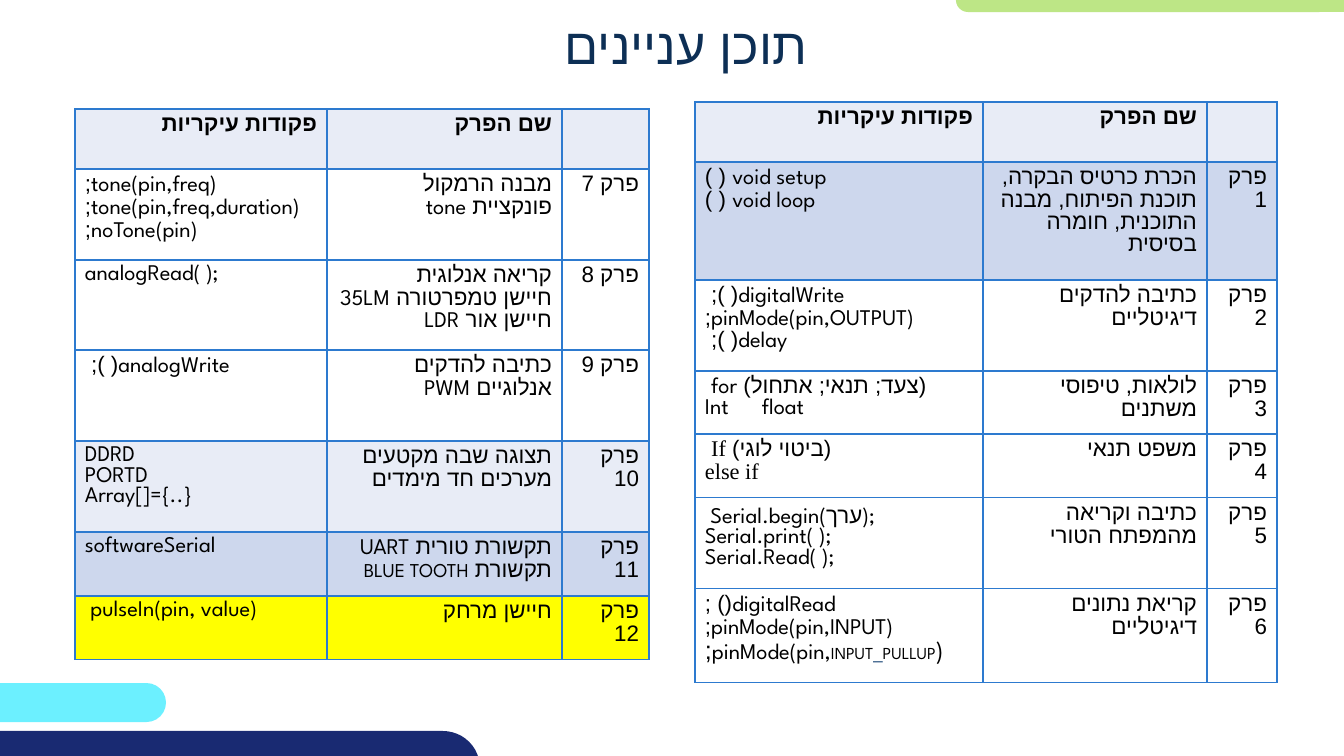
import pptx
import pptx.util
import pptx.dml.color
import pptx.enum.shapes
import pptx.enum.text
import pptx.oxml
import lxml.etree

PX = 914400 / 100.8
SPARTAN = "League Spartan"
ALIGN = pptx.enum.text.PP_ALIGN
HEADER, BLUE, YELLOW = "E8ECF6", "CDD7ED", "FFFF00"


def px(length):
    return pptx.util.Emu(round(length * PX))


def write(paragraph, text, size=16, font=SPARTAN, color="000000", bold=False,
          align=ALIGN.LEFT, rtl=False, spacing=None):
    paragraph.alignment = align
    paragraph._p.get_or_add_pPr().set("rtl", "1" if rtl else "0")
    if spacing:
        paragraph.line_spacing = spacing
    run = paragraph.add_run()
    run.text = text
    run.font.size = pptx.util.Pt(size)
    run.font.name = font
    run.font.bold = bold
    run.font.color.rgb = pptx.dml.color.RGBColor.from_string(color)
    complex_script = lxml.etree.SubElement(run.font._element, pptx.oxml.ns.qn("a:cs"))
    complex_script.set("typeface", "Arial")


deck = pptx.Presentation()
deck.slide_width, deck.slide_height = px(1344), px(756)
slide = deck.slides.add_slide(deck.slide_layouts[5])

# Rounded bars at the slide edges
for left, top, width, height, color in [
    (-166, 683, 332, 39, "6CF0FF"),
    (956, -12, 584, 24, "BDE686"),
    (-58, 731, 538, 74, "192A72"),
]:
    bar = slide.shapes.add_shape(pptx.enum.shapes.MSO_SHAPE.ROUNDED_RECTANGLE,
                                 px(left), px(top), px(width), px(height))
    bar.adjustments[0] = 0.5
    bar.shadow.inherit = False
    bar.fill.solid()
    bar.fill.fore_color.rgb = pptx.dml.color.RGBColor.from_string(color)
    bar.line.fill.background()

# Title
title = slide.shapes.title
title.left, title.top, title.width, title.height = px(395), px(8), px(582), px(72)
title.text_frame.vertical_anchor = pptx.enum.text.MSO_ANCHOR.MIDDLE
write(title.text_frame.paragraphs[0], "תוכן עניינים", size=36, color="0D2F55",
      align=ALIGN.CENTER, rtl=True)

# Chapters: row height, fill, code runs right to left, code lines, topic lines, chapter
heading = (60, HEADER, True, ["פקודות עיקריות"], ["שם הפרק"], "")
pullup_line = [("pinMode(pin,", {}), ("INPUT", {"size": 12}),
               ("_", {"size": 12, "font": "Arial", "color": "113F71"}),
               ("PULLUP", {"size": 12}), (");", {"size": 18})]
first_half = [
    heading,
    (118, BLUE, True, ["void setup ( )", "void loop ( )"],
     ["הכרת כרטיס הבקרה, תוכנת הפיתוח, מבנה התוכנית, חומרה בסיסית"], "פרק 1"),
    (91, None, True, ["digitalWrite( ); ", "pinMode(pin,OUTPUT);", "delay( ); "],
     ["כתיבה להדקים דיגיטליים"], "פרק 2"),
    (63, None, True, ["(צעד; תנאי; אתחול) for ", "Int\tfloat"],
     ["לולאות, טיפוסי משתנים"], "פרק 3"),
    (64, None, True, [[("(ביטוי לוגי) If ", {"font": "Times New Roman"})],
                      [("else if", {"font": "Times New Roman"})]],
     ["משפט תנאי"], "פרק 4"),
    (91, None, False, [" Serial.begin(ערך); Serial.print( );", "Serial.Read( );"],
     ["כתיבה וקריאה מהמפתח הטורי"], "פרק 5"),
    (94, None, True, ["digitalRead() ;", "pinMode(pin,INPUT);", pullup_line],
     ["קריאת נתונים דיגיטליים"], "פרק 6"),
]
second_half = [
    heading,
    (91, None, True, ["tone(pin,freq);", "tone(pin,freq,duration);", "noTone(pin);"],
     ["מבנה הרמקול", "פונקציית tone"], "פרק 7"),
    (90, None, False, ["analogRead( );"],
     ["קריאה אנלוגית", "חיישן טמפרטורה 35LM", "חיישן אור LDR"], "פרק 8"),
    (91, None, True, ["analogWrite( ); "], ["כתיבה להדקים אנלוגיים PWM"], "פרק 9"),
    (91, HEADER, False, ["DDRD", "PORTD", "Array[]={..}"],
     ["תצוגה שבה מקטעים", "מערכים חד מימדים"], "פרק 10"),
    (64, BLUE, False, ["softwareSerial"],
     ["תקשורת טורית UART", [("תקשורת ", {}), ("BLUE TOOTH", {"size": 14})]], "פרק 11"),
    (64, YELLOW, False, [" pulseIn(pin, value)"], ["חיישן מרחק"], "פרק 12"),
]


def style_cell(cell, fill):
    cell.margin_left = cell.margin_right = px(10)
    cell.margin_top = cell.margin_bottom = px(5)
    properties = cell._tc.get_or_add_tcPr()
    for side in ("lnL", "lnR", "lnT", "lnB"):
        properties.append(pptx.oxml.parse_xml(
            f'<a:{side} {pptx.oxml.ns.nsdecls("a")} w="12700"><a:solidFill>'
            f'<a:srgbClr val="2D7ACF"/></a:solidFill></a:{side}>'))
    if fill:
        cell.fill.solid()
        cell.fill.fore_color.rgb = pptx.dml.color.RGBColor.from_string(fill)
    else:
        cell.fill.background()


# Tables of contents
for left, top, widths, chapters in [
    (695, 102, (288, 224, 70), first_half),
    (75, 109, (252, 235, 87), second_half),
]:
    contents = slide.shapes.add_table(
        len(chapters), len(widths), px(left), px(top), px(sum(widths)),
        px(sum(chapter[0] for chapter in chapters))).table
    contents.first_row = contents.horz_banding = False
    for column, width in zip(contents.columns, widths):
        column.width = px(width)
    for row, (height, fill, code_rtl, code, topic, number) in enumerate(chapters):
        contents.rows[row].height = px(height)
        for col, lines in enumerate((code, topic, [number])):
            cell = contents.cell(row, col)
            style_cell(cell, fill)
            is_code = col == 0 and row > 0
            for index, line in enumerate(lines):
                if not line:
                    continue
                frame = cell.text_frame
                paragraph = frame.add_paragraph() if index else frame.paragraphs[0]
                tabbed = "\t" in line
                if tabbed:
                    paragraph._p.get_or_add_pPr().append(pptx.oxml.parse_xml(
                        f'<a:tabLst {pptx.oxml.ns.nsdecls("a")}>'
                        f'<a:tab pos="{px(57)}" algn="l"/></a:tabLst>'))
                rtl = not tabbed and (code_rtl or not is_code)
                for text, format in [(line, {})] if isinstance(line, str) else line:
                    write(paragraph, text, bold=row == 0, rtl=rtl,
                          align=ALIGN.LEFT if is_code else ALIGN.RIGHT,
                          spacing=0.9 if rtl else None, **format)

deck.save("out.pptx")
